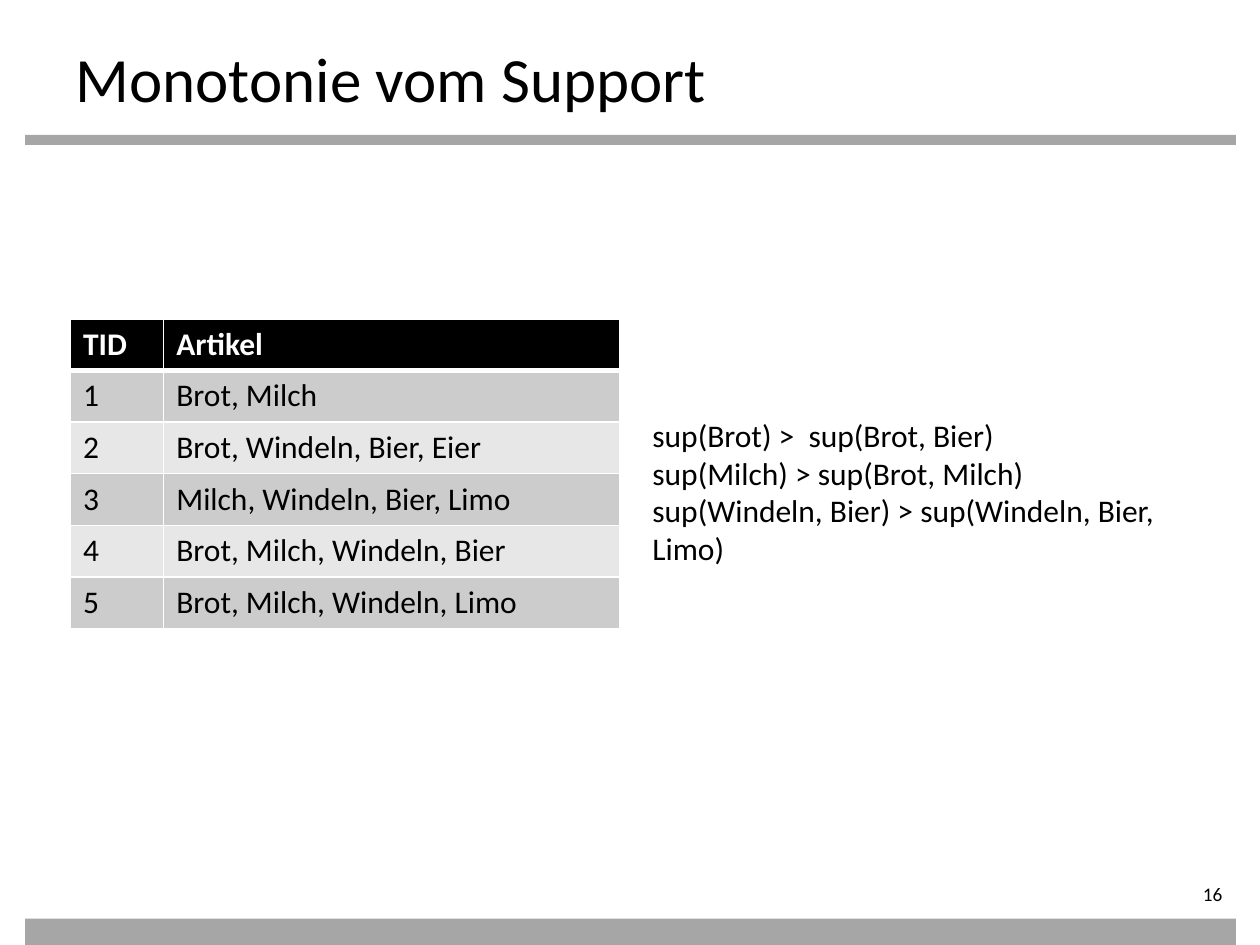
from pptx import Presentation
from pptx.dml.color import RGBColor
from pptx.enum.shapes import MSO_SHAPE as Shape
from pptx.enum.text import MSO_ANCHOR as Anchor, PP_ALIGN as Align
from pptx.oxml.ns import qn
from pptx.util import Inches, Pt
from lxml.etree import SubElement

BLACK = RGBColor(0x00, 0x00, 0x00)
WHITE = RGBColor(0xFF, 0xFF, 0xFF)
BAR_GRAY = RGBColor(0xA6, 0xA6, 0xA6)
ROW_DARK = RGBColor(0xCC, 0xCC, 0xCC)
ROW_LIGHT = RGBColor(0xE7, 0xE7, 0xE7)

TRANSACTIONS = [
    "Brot, Milch",
    "Brot, Windeln, Bier, Eier",
    "Milch, Windeln, Bier, Limo",
    "Brot, Milch, Windeln, Bier",
    "Brot, Milch, Windeln, Limo",
]
SUPPORT_RULES = [
    "sup(Brot) >  sup(Brot, Bier)",
    "sup(Milch) > sup(Brot, Milch)",
    "sup(Windeln, Bier) > sup(Windeln, Bier, Limo)",
]


def set_cell_borders(cell, widths, color):
    """Draw the left, right, top and bottom borders; widths are in points."""
    properties = cell._tc.get_or_add_tcPr()
    for index, (side, width) in enumerate(widths.items()):
        line = SubElement(properties, qn(f"a:ln{side}"), w=str(Pt(width)))
        fill = SubElement(line, qn("a:solidFill"))
        SubElement(fill, qn("a:srgbClr"), val=str(color))
        # The schema wants borders ahead of the cell fill.
        properties.insert(index, line)


class SlideBuilder:
    def __init__(self, presentation, font="Calibri", size=18):
        self.slide = presentation.slides.add_slide(presentation.slide_layouts[5])
        self.font = font
        self.size = size

    def add_lines(self, frame, lines, size=None, color=BLACK, bold=False,
                  align=Align.LEFT):
        for index, text in enumerate(lines):
            paragraph = frame.add_paragraph() if index else frame.paragraphs[0]
            paragraph.alignment = align
            run = paragraph.add_run()
            run.text = text
            run.font.name = self.font
            run.font.size = Pt(size or self.size)
            run.font.bold = bold
            run.font.color.rgb = color

    def title(self, text, left, top, width, height):
        title = self.slide.shapes.title
        title.left, title.top = Inches(left), Inches(top)
        title.width, title.height = Inches(width), Inches(height)
        title.text_frame.vertical_anchor = Anchor.MIDDLE
        self.add_lines(title.text_frame, [text], size=36)

    def bar(self, left, top, width, height):
        bar = self.slide.shapes.add_shape(
            Shape.RECTANGLE, Inches(left), Inches(top), Inches(width), Inches(height))
        bar.shadow.inherit = False
        bar.fill.solid()
        bar.fill.fore_color.rgb = BAR_GRAY
        bar.line.fill.background()

    def text(self, lines, left, top, width, height, **style):
        box = self.slide.shapes.add_textbox(
            Inches(left), Inches(top), Inches(width), Inches(height))
        frame = box.text_frame
        frame.word_wrap = True
        self.add_lines(frame, lines, **style)
        return frame

    def table(self, rows, left, top, column_widths, row_height):
        table = self.slide.shapes.add_table(
            len(rows), len(column_widths), Inches(left), Inches(top),
            Inches(sum(column_widths)), Inches(row_height * len(rows))).table
        for column, width in zip(table.columns, column_widths):
            column.width = Inches(width)
        for row_index, values in enumerate(rows):
            table.rows[row_index].height = Inches(row_height)
            header = row_index == 0
            fill = BLACK if header else (ROW_DARK if row_index % 2 else ROW_LIGHT)
            borders = {"L": 1, "R": 1, "T": 3 if row_index == 1 else 1,
                       "B": 3 if header else 1}
            for column_index, value in enumerate(values):
                cell = table.cell(row_index, column_index)
                cell.fill.solid()
                cell.fill.fore_color.rgb = fill
                set_cell_borders(cell, borders, WHITE)
                self.add_lines(cell.text_frame, [value],
                               color=WHITE if header else BLACK, bold=header)


def main():
    presentation = Presentation()
    presentation.slide_width = Inches(10)
    presentation.slide_height = Inches(7.5)

    builder = SlideBuilder(presentation)
    builder.bar(0.2, 1.07, 9.61, 0.08)
    builder.bar(0.2, 7.29, 9.61, 0.21)
    builder.title("Monotonie vom Support", 0.5, 0.21, 9, 0.8)
    builder.text(SUPPORT_RULES, 5.08, 3.25, 4.73, 1.31)

    rows = [("TID", "Artikel")]
    rows += [(str(tid), items) for tid, items in enumerate(TRANSACTIONS, start=1)]
    builder.table(rows, 0.56, 2.53, (0.74, 3.62), 0.41)

    number = builder.text(["16"], 8.7, 7, 1.1, 0.22, size=11, align=Align.RIGHT)
    number.margin_left = number.margin_top = number.margin_bottom = 0

    presentation.save("out.pptx")


if __name__ == "__main__":
    main()
